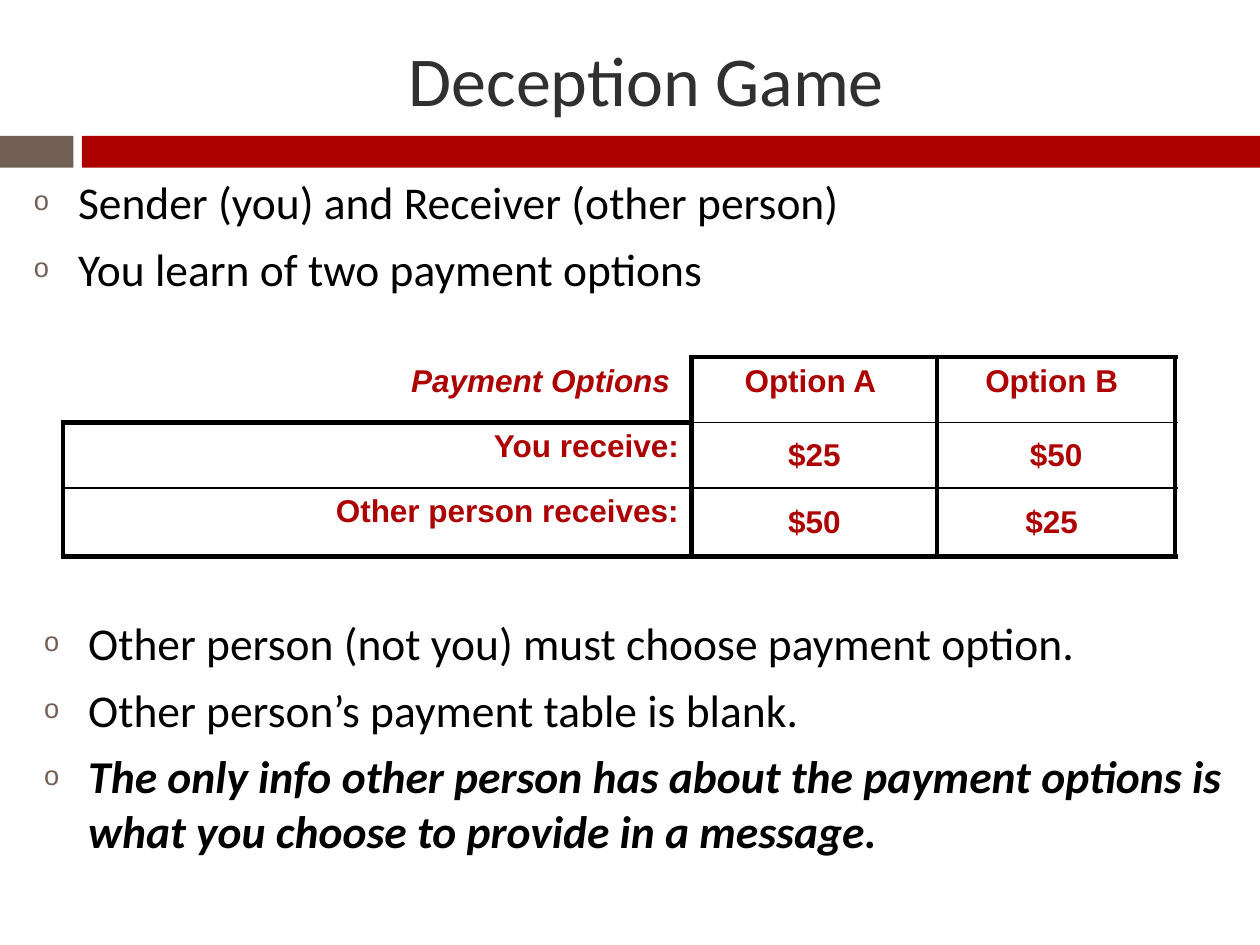
from dataclasses import dataclass

from lxml.etree import SubElement
from pptx import Presentation
from pptx.dml.color import RGBColor
from pptx.enum.shapes import MSO_SHAPE
from pptx.enum.text import MSO_ANCHOR, MSO_AUTO_SIZE, PP_ALIGN
from pptx.oxml import parse_xml
from pptx.oxml.ns import nsdecls, qn
from pptx.slide import Slide
from pptx.util import Cm, Pt


def color(code):
    return RGBColor.from_string(code)


def place(shape, box):
    shape.left, shape.top, shape.width, shape.height = map(Cm, box)


@dataclass
class Deck:
    slide: Slide
    red: str = "AD0101"
    brown: str = "726056"
    black: str = "000000"
    gray: str = "303030"
    sans: str = "Calibri"
    grid: str = "Arial"

    def font(self, para, name, size, code, bold=False, slant=False):
        for run in para.runs:
            font = run.font
            font.name, font.size = name, Pt(size)
            font.bold, font.italic = bold, slant
            font.color.rgb = color(code)

    def bar(self, box, code):
        shape = self.slide.shapes.add_shape(MSO_SHAPE.RECTANGLE, *map(Cm, box))
        shape.shadow.inherit = False
        shape.fill.solid()
        shape.fill.fore_color.rgb = color(code)
        shape.line.fill.background()

    def title(self, box, text):
        shape = self.slide.shapes.title
        place(shape, box)
        frame = shape.text_frame
        frame.text = text
        frame.auto_size = MSO_AUTO_SIZE.NONE
        frame.vertical_anchor = MSO_ANCHOR.MIDDLE
        para = frame.paragraphs[0]
        para.alignment = PP_ALIGN.CENTER
        self.font(para, self.sans, 40, self.gray)

    def bullet(self, para):
        para.space_before = Pt(7)
        props = para._p.get_or_add_pPr()
        props.set("marL", str(Cm(0.89)))
        props.set("indent", str(-Cm(0.89)))
        tint = SubElement(props, qn("a:buClr"))
        SubElement(tint, qn("a:srgbClr"), val=self.brown)
        SubElement(props, qn("a:buSzPct"), val="60000")
        SubElement(props, qn("a:buFont"), typeface=self.grid)
        SubElement(props, qn("a:buChar"), char="o")

    def list(self, shape, box, lines, strong=()):
        place(shape, box)
        frame = shape.text_frame
        frame.word_wrap = True
        frame.auto_size = MSO_AUTO_SIZE.NONE
        frame.text = "\n".join(lines)
        for row, para in enumerate(frame.paragraphs):
            self.bullet(para)
            loud = row in strong
            self.font(para, self.sans, 26, self.black, loud, loud)

    def border(self, cell, sides):
        props = cell._tc.get_or_add_tcPr()
        for spot, (side, width) in enumerate(zip("LRTB", sides)):
            paint = (f'<a:solidFill><a:srgbClr val="{self.black}"/></a:solidFill>'
                     if width else "<a:noFill/>")
            props.insert(spot, parse_xml(
                f'<a:ln{side} {nsdecls("a")} w="{Pt(width)}">{paint}</a:ln{side}>'))

    def table(self, box, wides, highs, data):
        table = self.slide.shapes.add_table(
            len(highs), len(wides), *map(Cm, box)).table
        table.first_row = table.horz_banding = False
        for col, wide in zip(table.columns, wides):
            col.width = Cm(wide)
        for row, high in zip(table.rows, highs):
            row.height = Cm(high)
        last = len(highs) - 1
        for y, line in enumerate(data):
            for x, text in enumerate(line):
                cell = table.cell(y, x)
                cell.text = text
                cell.fill.background()
                head = y == 0 or x == 0
                cell.vertical_anchor = MSO_ANCHOR.TOP if head else MSO_ANCHOR.MIDDLE
                para = cell.text_frame.paragraphs[0]
                para.alignment = PP_ALIGN.CENTER if x else PP_ALIGN.RIGHT
                corner = x == y == 0
                self.font(para, self.grid, 18, self.red, True, corner)
                above = 3 if y == 0 or (x == 0 and y == 1) else 1
                below = 3 if y == last else 1
                self.border(cell, (0, 3, 0, 3) if corner else (3, 3, above, below))


def main():
    show = Presentation()
    show.slide_width, show.slide_height = Cm(25.4), Cm(19.05)
    slide = show.slides.add_slide(show.slide_layouts[1])
    deck = Deck(slide)
    deck.bar((0, 2.74, 1.48, 0.64), deck.brown)
    deck.bar((1.65, 2.74, 23.75, 0.64), deck.red)
    deck.title((1.7, 0.64, 22.66, 1.9), "Deception Game")
    deck.list(slide.placeholders[1], (0.43, 3.38, 24.33, 2.97), [
        "Sender (you) and Receiver (other person)",
        "You learn of two payment options",
    ])
    deck.table((1.27, 7.2, 22.42, 4.02), (12.67, 4.95, 4.8), (1.32, 1.32, 1.38), [
        ("Payment Options ", "Option A ", "Option B "),
        ("You receive:", "$25", "$50"),
        ("Other person receives:", "$50", "$25 "),
    ])
    box = (0.64, 12.27, 24.33, 4.24)
    deck.list(slide.shapes.add_textbox(*map(Cm, box)), box, [
        "Other person (not you) must choose payment option.",
        "Other person’s payment table is blank.",
        "The only info other person has about the payment options is "
        "what you choose to provide in a message.",
    ], strong=(2,))
    show.save("out.pptx")


if __name__ == "__main__":
    main()
